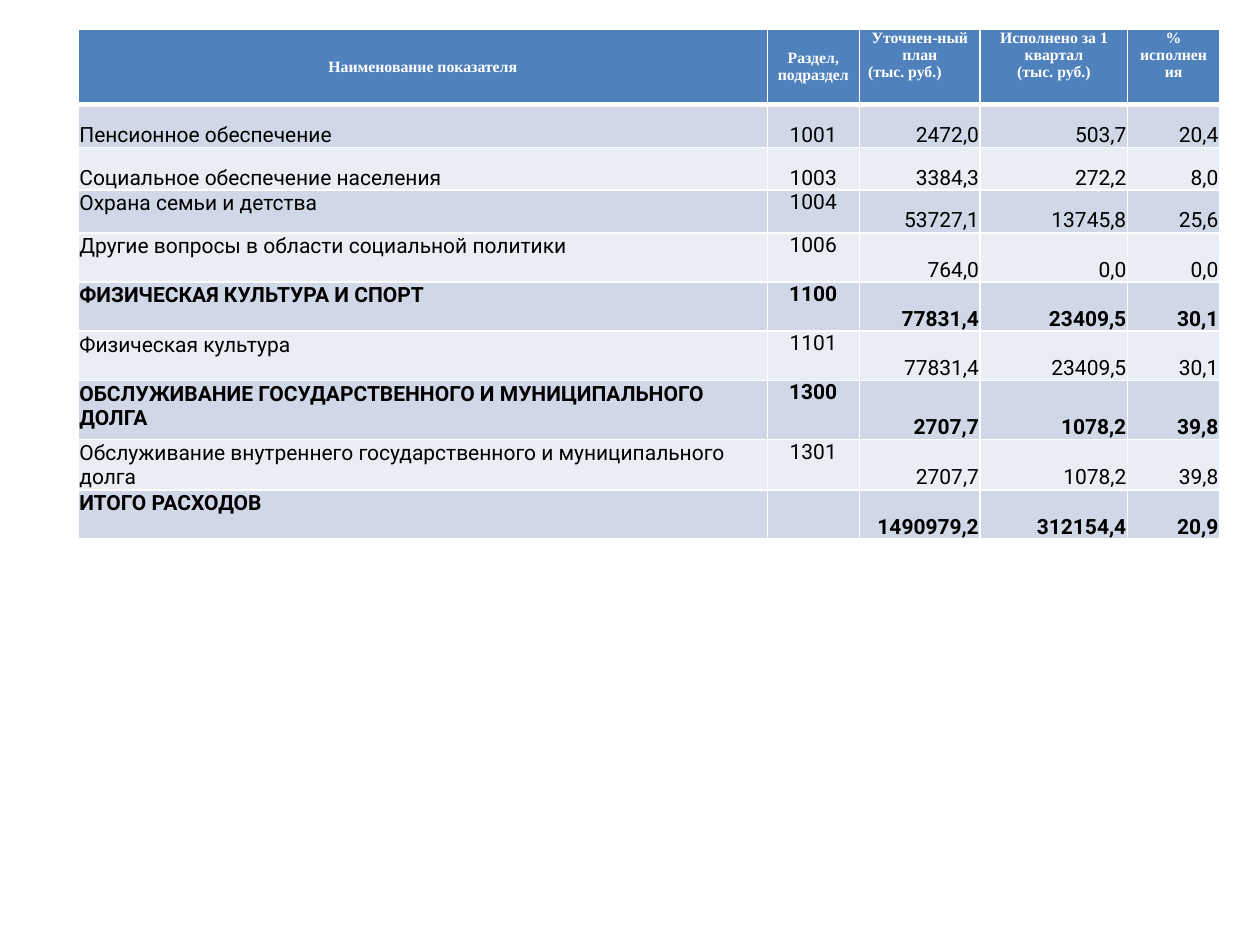
from dataclasses import dataclass

from lxml.etree import SubElement
from pptx import Presentation
from pptx.dml.color import RGBColor as RGB
from pptx.enum.text import MSO_ANCHOR as ANCHOR, PP_ALIGN as ALIGN
from pptx.oxml.ns import qn
from pptx.util import Inches, Pt


@dataclass(frozen=True)
class Theme:
    header_fill: str = "4F81BD"
    bands: tuple = ("D0D8E8", "E9EDF4")
    white: str = "FFFFFF"
    black: str = "000000"
    header_font: str = "Times New Roman"
    body_font: str = "Roboto"
    header_size: int = 9
    body_size: int = 12
    rule: int = 1
    header_rule: int = 3


THEME = Theme()
COL_WIDTHS = (5.47, 0.73, 0.96, 1.17, 0.73)
ROW_HEIGHTS = (0.6, *[0.34] * 3, *[0.39] * 3, 0.47, *[0.39] * 2)
BOTTOM_ROWS = (1, 2)
HEADERS = (
    ("Наименование показателя",),
    ("Раздел, подраздел",),
    ("Уточнен-ный план", "(тыс. руб.)"),
    ("Исполнено за 1 квартал", "(тыс. руб.)"),
    ("% исполнения",),
)
ROWS = (
    ("Пенсионное обеспечение", "1001", "2472,0", "503,7", "20,4"),
    ("Социальное обеспечение населения", "1003", "3384,3", "272,2", "8,0"),
    ("Охрана семьи и детства", "1004", "53727,1", "13745,8", "25,6"),
    ("Другие вопросы в области социальной политики", "1006", "764,0", "0,0", "0,0"),
    ("ФИЗИЧЕСКАЯ КУЛЬТУРА И СПОРТ", "1100", "77831,4", "23409,5", "30,1"),
    ("Физическая культура", "1101", "77831,4", "23409,5", "30,1"),
    ("ОБСЛУЖИВАНИЕ ГОСУДАРСТВЕННОГО И МУНИЦИПАЛЬНОГО ДОЛГА", "1300",
     "2707,7", "1078,2", "39,8"),
    ("Обслуживание внутреннего государственного и муниципального долга", "1301",
     "2707,7", "1078,2", "39,8"),
    ("ИТОГО РАСХОДОВ", "", "1490979,2", "312154,4", "20,9"),
)


def set_borders(cell, top, bottom):
    props = cell._tc.get_or_add_tcPr()
    widths = {"lnL": THEME.rule, "lnR": THEME.rule, "lnT": top, "lnB": bottom}
    for i, (side, width) in enumerate(widths.items()):
        ln = SubElement(props, qn(f"a:{side}"), w=str(Pt(width)))
        fill = SubElement(ln, qn("a:solidFill"))
        SubElement(fill, qn("a:srgbClr"), val=THEME.white)
        props.insert(i, ln)


def style_cell(cell, fill, anchor, side, top):
    cell.fill.solid()
    cell.fill.fore_color.rgb = RGB.from_string(fill)
    cell.vertical_anchor = anchor
    cell.margin_left = cell.margin_right = Inches(side)
    cell.margin_top, cell.margin_bottom = Inches(top), 0


def add_text(p, text, align, font, size, color, bold):
    p.alignment = align
    if not text:
        return
    r = p.add_run()
    r.text = text
    r.font.name, r.font.size, r.font.bold = font, Pt(size), bold
    r.font.color.rgb = RGB.from_string(color)


def fill_header(cell, col, lines):
    anchor = ANCHOR.MIDDLE if col < 2 else ANCHOR.TOP
    style_cell(cell, THEME.header_fill, anchor, 0.07, 0)
    set_borders(cell, THEME.rule, THEME.header_rule)
    tf = cell.text_frame
    for i, line in enumerate(lines):
        p = tf.add_paragraph() if i else tf.paragraphs[0]
        align = ALIGN.LEFT if col == 2 and i else ALIGN.CENTER
        add_text(p, line, align, THEME.header_font, THEME.header_size,
                 THEME.white, True)


def fill_body(cell, row, col, text, bold):
    at_bottom = col > 1 or row in BOTTOM_ROWS
    side, top = (0.07, 0) if col == 1 else (0.01, 0.01)
    style_cell(cell, THEME.bands[(row - 1) % 2],
               ANCHOR.BOTTOM if at_bottom else ANCHOR.TOP, side, top)
    set_borders(cell, THEME.header_rule if row == 1 else THEME.rule, THEME.rule)
    align = (ALIGN.LEFT, ALIGN.CENTER)[col] if col < 2 else ALIGN.RIGHT
    add_text(cell.text_frame.paragraphs[0], text, align, THEME.body_font,
             THEME.body_size, THEME.black, bold)


def add_budget_table(s):
    table = s.shapes.add_table(
        len(ROW_HEIGHTS), len(COL_WIDTHS), Inches(0.62), Inches(0.23),
        Inches(sum(COL_WIDTHS)), Inches(sum(ROW_HEIGHTS))).table
    for column, width in zip(table.columns, COL_WIDTHS):
        column.width = Inches(width)
    for row, height in zip(table.rows, ROW_HEIGHTS):
        row.height = Inches(height)
    for col, lines in enumerate(HEADERS):
        fill_header(table.cell(0, col), col, lines)
    for row, values in enumerate(ROWS, 1):
        for col, text in enumerate(values):
            fill_body(table.cell(row, col), row, col, text, values[0].isupper())


def main():
    prs = Presentation()
    prs.slide_width, prs.slide_height = Inches(10), Inches(7.5)
    add_budget_table(prs.slides.add_slide(prs.slide_layouts[6]))
    prs.save("out.pptx")


if __name__ == "__main__":
    main()
